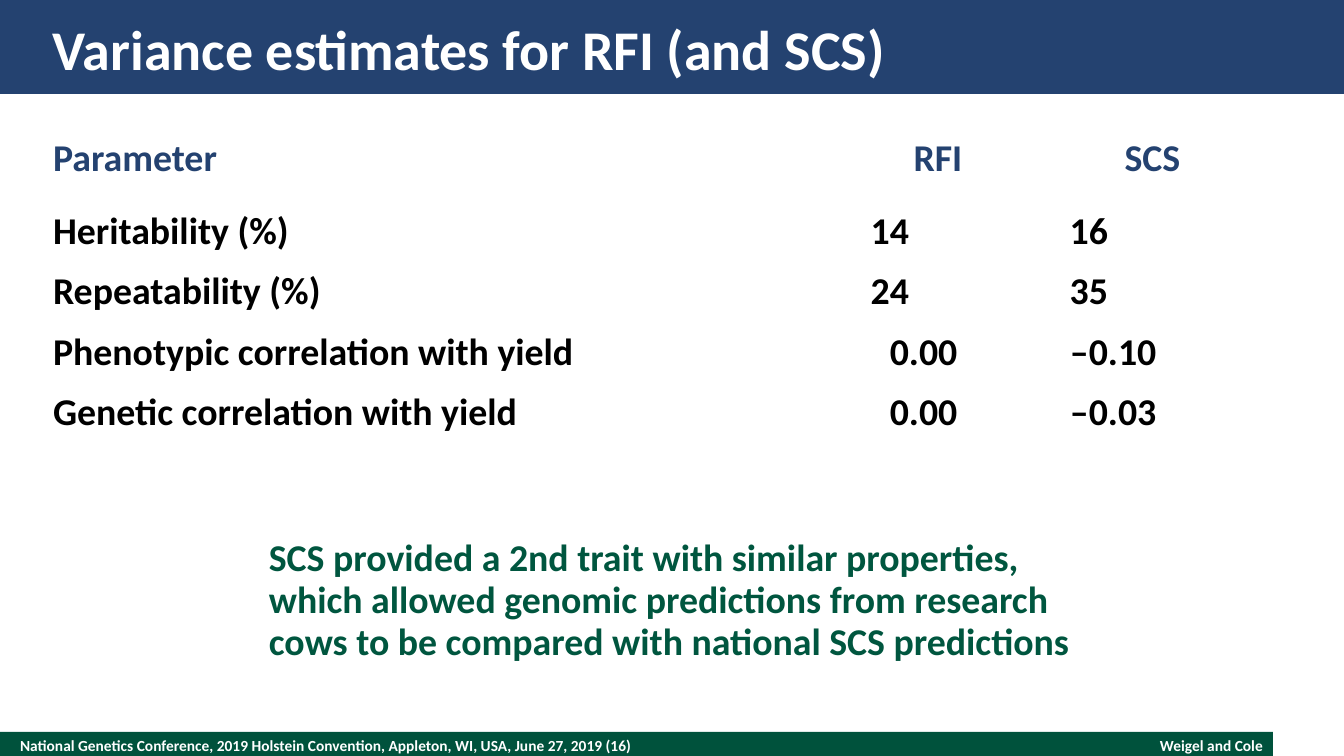
import pptx
import pptx.util
import pptx.dml.color
import pptx.enum.shapes
import pptx.enum.text
from lxml import etree

RGB = pptx.dml.color.RGBColor
NAVY = RGB(0x24, 0x42, 0x70)
GREEN = RGB(0x00, 0x52, 0x3C)
LEAF = RGB(0x00, 0x56, 0x3F)
WHITE = RGB(0xFF, 0xFF, 0xFF)
BLACK = RGB(0x00, 0x00, 0x00)

ALIGN = pptx.enum.text.PP_ALIGN
ANCHOR = pptx.enum.text.MSO_ANCHOR
FIT = pptx.enum.text.MSO_AUTO_SIZE
NS = "http://schemas.openxmlformats.org/drawingml/2006/main"

# Content: boxes are left, top, width, height in px
BARS = [
    ((0, 732, 1273, 27), GREEN),
    ((0, 0, 1344, 94), NAVY),
]
FLAT = {"vertical_anchor": ANCHOR.MIDDLE, "margin_left": 0, "margin_right": 0,
        "margin_top": 0, "margin_bottom": 0}
GROW = {"auto_size": FIT.SHAPE_TO_FIT_TEXT}
TEXTS = [
    ((20, 732, 874, 27), FLAT, 11, WHITE, {},
     "National Genetics Conference, 2019 Holstein Convention, "
     "Appleton, WI, USA, June 27, 2019 (16)"),
    ((968, 736, 295, 19), FLAT | GROW, 11, WHITE, {"alignment": ALIGN.RIGHT},
     "Weigel and Cole"),
    ((53, 13, 1237, 71), FLAT, 40, WHITE, {},
     "Variance estimates for RFI (and SCS)"),
    ((259, 532, 826, 137), GROW, 27, LEAF, {"line_spacing": pptx.util.Pt(30)},
     "SCS provided a 2nd trait with similar properties, which allowed "
     "genomic predictions from research cows to be compared with "
     "national SCS predictions"),
]
ROWS = [
    ("Parameter", "RFI", "SCS"),
    ("Heritability (%)", "14", "16"),
    ("Repeatability (%)", "24", "35"),
    ("Phenotypic correlation with yield", "0.00", "–0.10"),
    ("Genetic correlation with yield", "0.00", "–0.03"),
]
GRID = (53, 131)
COLS = (806, 158, 271)
HIGHS = (73, 60, 61, 60, 61)
TABS = (None, 50, 91)  # decimal tab of each column


def emu(px):
    return round(px * 914400 / 100.8)


def put(item, values):
    for name, value in values.items():
        setattr(item, name, value)


def write(para, text, size, color, form):
    put(para, form)
    run = para.add_run()
    run.text = text
    put(run.font, {"name": "Calibri", "size": pptx.util.Pt(size), "bold": True})
    run.font.color.rgb = color


def add_tab(para, px):
    tabs = etree.SubElement(para._p.get_or_add_pPr(), f"{{{NS}}}tabLst")
    etree.SubElement(tabs, f"{{{NS}}}tab", pos=str(emu(px)), algn="dec")


def main():
    deck = pptx.Presentation()
    put(deck, {"slide_width": emu(1344), "slide_height": emu(756)})
    slide = deck.slides.add_slide(deck.slide_layouts[6])
    shapes = slide.shapes

    # Title band and footer bar
    for box, color in BARS:
        bar = shapes.add_shape(pptx.enum.shapes.MSO_SHAPE.RECTANGLE, *map(emu, box))
        bar.shadow.inherit = False
        bar.fill.solid()
        bar.fill.fore_color.rgb = color
        bar.line.fill.background()

    # Footer, title and remark
    for box, frame, size, color, form, text in TEXTS:
        body = shapes.add_textbox(*map(emu, box)).text_frame
        put(body, {"word_wrap": True} | frame)
        write(body.paragraphs[0], text, size, color, form)

    # Table of estimates
    table = shapes.add_table(len(ROWS), len(COLS), *map(emu, GRID),
                             emu(sum(COLS)), emu(sum(HIGHS))).table
    put(table, {"horz_banding": False, "first_row": False})
    for col, wide in zip(table.columns, COLS):
        col.width = emu(wide)
    for r, (row, high) in enumerate(zip(ROWS, HIGHS)):
        table.rows[r].height = emu(high)
        head = r == 0
        for c, text in enumerate(row):
            cell = table.cell(r, c)
            cell.fill.background()
            put(cell, {"margin_left": 0, "margin_right": 0, "margin_top": 0,
                       "margin_bottom": emu(5) if head else 0})
            para = cell.text_frame.paragraphs[0]
            form = {"line_spacing": pptx.util.Pt(36)}
            if c and head:
                form["alignment"] = ALIGN.CENTER
            elif c:
                add_tab(para, TABS[c])
                text = "\t" + text
            write(para, text, 27, NAVY if head else BLACK, form)

    deck.save("out.pptx")


if __name__ == "__main__":
    main()
